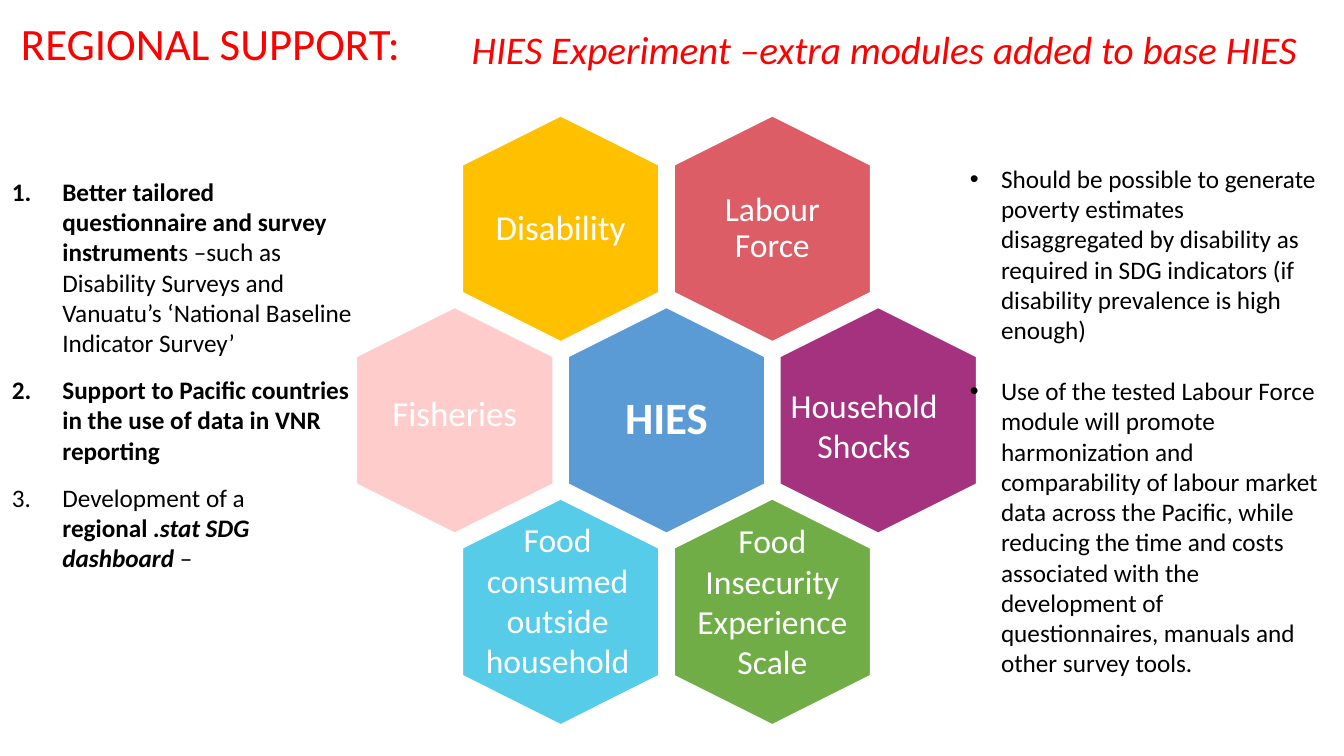
from dataclasses import dataclass
from typing import Optional

import lxml.etree
import pptx
import pptx.dml.color
import pptx.enum.shapes
import pptx.enum.text
import pptx.oxml.ns
import pptx.util

Inches = pptx.util.Inches
Pt = pptx.util.Pt
Align = pptx.enum.text.PP_ALIGN
Anchor = pptx.enum.text.MSO_ANCHOR


@dataclass(frozen=True)
class Theme:
    font: str = "Calibri"
    red: str = "FF0000"
    black: str = "000000"
    white: str = "FFFFFF"
    title_size: int = 32
    subtitle_size: int = 28
    body_size: int = 18
    module_size: int = 24
    short_module_size: int = 25
    centre_size: int = 32


@dataclass(frozen=True)
class Box:
    left: float
    top: float
    width: float
    height: float


@dataclass(frozen=True)
class Piece:
    text: str
    bold: bool = False
    italic: bool = False


@dataclass(frozen=True)
class Module:
    """A hexagon: place in half columns and rows from the centre, and its label."""
    text: str
    half_columns: int
    row: int
    fill: str
    size: int = 24
    bold: bool = False
    width: float = 1.34
    height: float = 1.54
    shift_x: float = 0
    shift_y: float = 0
    inset: float = 0.1
    line_spacing: Optional[float] = None


THEME = Theme()

# Honeycomb geometry
CENTRE_X, CENTRE_Y = 6.61, 4.17
HALF_COLUMN, ROW_PITCH = 1.05, 1.9
HEXAGON_LENGTH, HEXAGON_BREADTH = 2.24, 1.95

MODULES = [
    Module("Labour Force", 1, -1, "DD5D66", THEME.module_size, line_spacing=0.9),
    Module("Disability", -1, -1, "FFC000", THEME.short_module_size, inset=0, line_spacing=0.9),
    Module("HIES", 0, 0, "5B9BD5", THEME.centre_size, bold=True, line_spacing=0.9),
    Module("Household Shocks", 2, 0, "A4327E", THEME.module_size,
           width=1.72, height=0.91, shift_x=-0.14, shift_y=0.05),
    Module("Food Insecurity Experience Scale", 1, 1, "70AD47", THEME.module_size,
           width=2.11, height=1.72, shift_y=-0.11),
    Module("Food consumed outside household", -1, 1, "56CCE8", THEME.module_size,
           width=1.91, height=1.72, shift_x=-0.03, shift_y=-0.12),
    Module("Fisheries", -2, 0, "FFCCCC", THEME.short_module_size,
           width=1.82, height=1.11, shift_y=-0.05, inset=0, line_spacing=0.9),
]

SUPPORT_ITEMS = [
    [Piece("Better tailored questionnaire and survey instrument", bold=True),
     Piece("s –such as Disability Surveys and Vanuatu’s ‘National Baseline Indicator Survey’")],
    [Piece("Support to Pacific countries in the use of data in VNR reporting", bold=True)],
    [Piece("Development of a "), Piece("regional ", bold=True),
     Piece(".stat SDG dashboard ", bold=True, italic=True), Piece("–")],
]

BENEFIT_ITEMS = [
    [Piece("Should be possible to generate poverty estimates disaggregated by disability "
           "as required in SDG indicators (if disability prevalence is high enough)")],
    [Piece("Use of the tested Labour Force module will promote harmonization and "
           "comparability of labour market data across the Pacific, while reducing the "
           "time and costs associated with the development of questionnaires, manuals "
           "and other survey tools.")],
]


def rgb(colour: str) -> pptx.dml.color.RGBColor:
    return pptx.dml.color.RGBColor.from_string(colour)


def format_run(run, size: int, colour: str, bold: bool = False, italic: bool = False) -> None:
    run.font.name = THEME.font
    run.font.size = Pt(size)
    run.font.color.rgb = rgb(colour)
    run.font.bold = bold
    run.font.italic = italic


def add_text_frame(slide, box: Box):
    shape = slide.shapes.add_textbox(
        Inches(box.left), Inches(box.top), Inches(box.width), Inches(box.height))
    shape.text_frame.word_wrap = True
    return shape.text_frame


def add_heading(slide, box: Box, text: str, size: int, italic: bool = False) -> None:
    text_frame = add_text_frame(slide, box)
    text_frame.text = text
    paragraph = text_frame.paragraphs[0]
    paragraph.line_spacing = 0.9
    format_run(paragraph.runs[0], size, THEME.red, italic=italic)


def add_module(slide, module: Module) -> None:
    centre_x = CENTRE_X + module.half_columns * HALF_COLUMN
    centre_y = CENTRE_Y + module.row * ROW_PITCH

    # Hexagon standing on its point
    hexagon = slide.shapes.add_shape(
        pptx.enum.shapes.MSO_SHAPE.HEXAGON,
        Inches(centre_x - HEXAGON_LENGTH / 2), Inches(centre_y - HEXAGON_BREADTH / 2),
        Inches(HEXAGON_LENGTH), Inches(HEXAGON_BREADTH))
    hexagon.rotation = 90
    hexagon.adjustments[0] = 0.25
    hexagon.adjustments[1] = 1.1547
    hexagon.shadow.inherit = False
    hexagon.fill.solid()
    hexagon.fill.fore_color.rgb = rgb(module.fill)
    hexagon.line.color.rgb = rgb(THEME.white)
    hexagon.line.width = Pt(1)

    # Upright label
    text_frame = add_text_frame(slide, Box(
        centre_x + module.shift_x - module.width / 2,
        centre_y + module.shift_y - module.height / 2, module.width, module.height))
    text_frame.margin_left = text_frame.margin_right = Inches(module.inset)
    text_frame.vertical_anchor = Anchor.MIDDLE
    text_frame.text = module.text
    paragraph = text_frame.paragraphs[0]
    paragraph.alignment = Align.CENTER
    paragraph.line_spacing = module.line_spacing
    format_run(paragraph.runs[0], module.size, THEME.white, module.bold)


def add_list(slide, box: Box, items: list[list[Piece]], indent: float,
             gap: int, numbered: bool) -> None:
    text_frame = add_text_frame(slide, box)
    for index, pieces in enumerate(items):
        paragraph = text_frame.add_paragraph() if index else text_frame.paragraphs[0]
        if index < len(items) - 1:
            paragraph.space_after = Pt(gap)
        for piece in pieces:
            run = paragraph.add_run()
            run.text = piece.text
            format_run(run, THEME.body_size, THEME.black, piece.bold, piece.italic)

        # Hanging bullet or number
        properties = paragraph._p.get_or_add_pPr()
        properties.set("marL", str(Inches(indent)))
        properties.set("indent", str(-Inches(indent)))
        qn = pptx.oxml.ns.qn
        if numbered:
            lxml.etree.SubElement(properties, qn("a:buAutoNum"), type="arabicPeriod")
        else:
            lxml.etree.SubElement(properties, qn("a:buFont"), typeface="Arial")
            lxml.etree.SubElement(properties, qn("a:buChar"), char="•")


def main() -> None:
    presentation = pptx.Presentation()
    presentation.slide_width = Inches(13.33)
    presentation.slide_height = Inches(7.5)
    slide = presentation.slides.add_slide(presentation.slide_layouts[6])

    # Honeycomb of survey modules
    for module in MODULES:
        add_module(slide, module)

    # Headings
    add_heading(slide, Box(4.58, 0.25, 8.56, 1.15),
                "HIES Experiment –extra modules added to base HIES",
                THEME.subtitle_size, italic=True)
    add_heading(slide, Box(0.11, 0.17, 4.12, 1.15), "REGIONAL SUPPORT:", THEME.title_size)

    # Side lists
    add_list(slide, Box(9.52, 1.57, 3.69, 5.25), BENEFIT_ITEMS, 0.31, 22, numbered=False)
    add_list(slide, Box(0.02, 1.7, 3.58, 4.24), SUPPORT_ITEMS, 0.5, 12, numbered=True)

    presentation.save("out.pptx")


if __name__ == "__main__":
    main()
